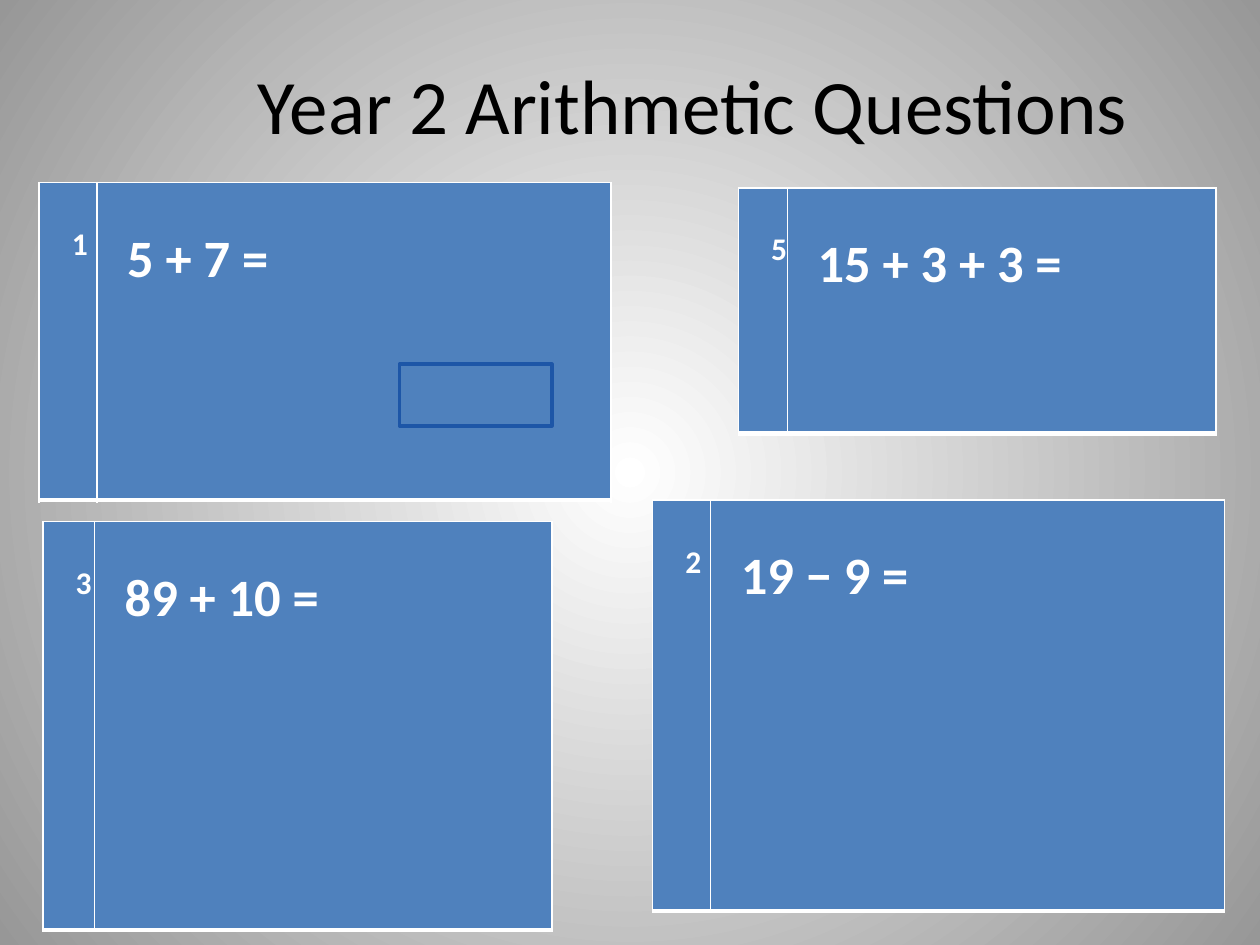
"""Builds a slide of Year 2 arithmetic questions, one small table per question."""
from dataclasses import dataclass

from lxml.etree import SubElement
from pptx import Presentation
from pptx.dml.color import RGBColor
from pptx.enum.shapes import MSO_SHAPE
from pptx.enum.text import MSO_ANCHOR, PP_ALIGN
from pptx.oxml.ns import qn
from pptx.util import Inches, Pt

TITLE = "Year 2 Arithmetic Questions"
TITLE_PLACE = (1, 0.2, 9, 1.25)
QUESTIONS = [
    {"number": "1", "sum": "5 + 7 =", "place": (0.31, 1.45, 4.54, 2.52), "number_width": 0.46},
    {"number": "2", "sum": "19 − 9 =", "place": (5.18, 3.97, 4.54, 3.26), "number_width": 0.46},
    {"number": "3", "sum": "89 + 10 =", "place": (0.34, 4.14, 4.04, 3.24), "number_width": 0.41},
    {"number": "5", "sum": "15 + 3 + 3 =", "place": (5.86, 1.49, 3.79, 1.95), "number_width": 0.39},
]
ANSWER_PLACE = (3.17, 2.89, 1.21, 0.49)
BORDERS = {"a:lnL": 1, "a:lnR": 1, "a:lnT": 1, "a:lnB": 3}


@dataclass(frozen=True)
class Theme:
    font: str = "Calibri"
    title: str = "000000"
    text: str = "FFFFFF"
    panel: str = "4F81BD"
    answer: str = "1D56A7"
    centre: str = "FFFFFF"
    edge: str = "979797"
    title_size: int = 44
    number_size: int = 18
    sum_size: int = 30


THEME = Theme()


def inches(values):
    return [Inches(value) for value in values]


def write(paragraph, text, size, color, bold=False):
    span = paragraph.add_run()
    span.text = text
    span.font.name = THEME.font
    span.font.size = Pt(size)
    span.font.bold = bold
    span.font.color.rgb = RGBColor.from_string(color)


def paint_background(page):
    fill = page.background.fill
    fill.gradient()
    for stop, color in zip(fill.gradient_stops, (THEME.centre, THEME.edge)):
        stop.color.rgb = RGBColor.from_string(color)
    gradient = page.element.find(".//" + qn("a:gradFill"))
    linear = gradient.find(qn("a:lin"))
    if linear is not None:
        gradient.remove(linear)
    radial = SubElement(gradient, qn("a:path"), path="circle")
    SubElement(radial, qn("a:fillToRect"), l="50000", t="50000", r="50000", b="50000")


def add_title(page):
    box = page.shapes.title
    box.left, box.top, box.width, box.height = inches(TITLE_PLACE)
    box.text_frame.vertical_anchor = MSO_ANCHOR.MIDDLE
    paragraph = box.text_frame.paragraphs[0]
    paragraph.alignment = PP_ALIGN.CENTER
    write(paragraph, TITLE, THEME.title_size, THEME.title)


def format_cell(cell, text, size, indent):
    cell.margin_left, cell.margin_top, cell.margin_right, cell.margin_bottom = inches(
        (0.16, 0.32, 0.11, 0.24))
    properties = cell._tc.get_or_add_tcPr()
    for side, width in BORDERS.items():
        line = SubElement(properties, qn(side), w=str(Pt(width)))
        SubElement(SubElement(line, qn("a:solidFill")), qn("a:srgbClr"), val=THEME.text)
    cell.fill.solid()
    cell.fill.fore_color.rgb = RGBColor.from_string(THEME.panel)
    paragraph = cell.text_frame.paragraphs[0]
    paragraph.line_spacing = 1.07
    paragraph_properties = paragraph._p.get_or_add_pPr()
    paragraph_properties.set("marL", str(Inches(indent)))
    paragraph_properties.set("indent", "0")
    write(paragraph, text, size, THEME.text, bold=True)


def add_question(page, question):
    table = page.shapes.add_table(1, 2, *inches(question["place"])).table
    number_width = question["number_width"]
    table.columns[0].width = Inches(number_width)
    table.columns[1].width = Inches(question["place"][2] - number_width)
    format_cell(table.cell(0, 0), question["number"], THEME.number_size, 0.1)
    format_cell(table.cell(0, 1), question["sum"], THEME.sum_size, 0.08)


def add_answer_box(page):
    box = page.shapes.add_shape(MSO_SHAPE.RECTANGLE, *inches(ANSWER_PLACE))
    box.shadow.inherit = False
    box.fill.background()
    box.line.color.rgb = RGBColor.from_string(THEME.answer)
    box.line.width = Pt(2)


def main():
    deck = Presentation()
    deck.slide_width, deck.slide_height = inches((10, 7.5))
    page = deck.slides.add_slide(deck.slide_layouts[5])
    paint_background(page)
    add_title(page)
    for question in QUESTIONS:
        add_question(page, question)
    add_answer_box(page)
    deck.save("out.pptx")


if __name__ == "__main__":
    main()
